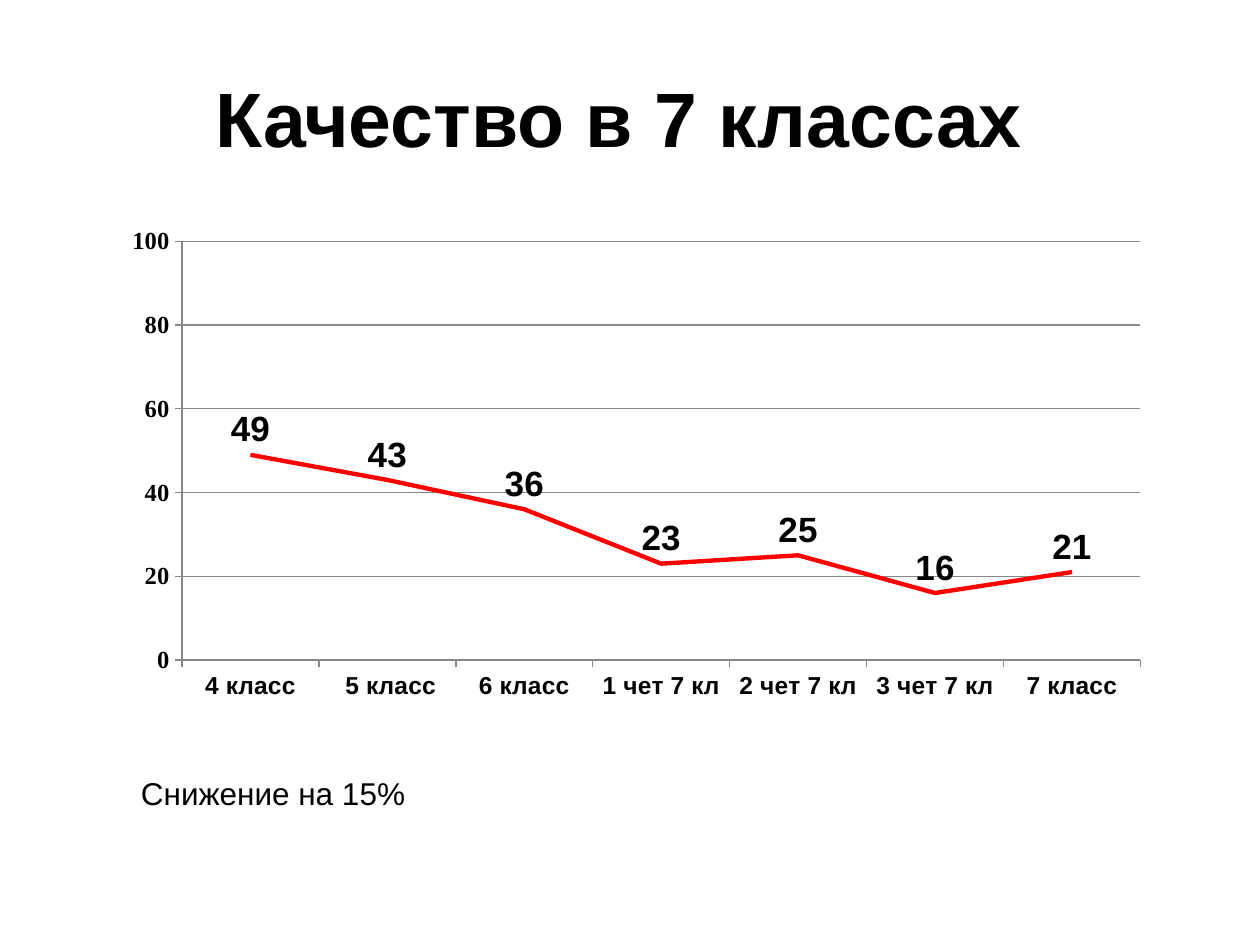
from lxml import etree
from pptx import Presentation
from pptx.chart.data import CategoryChartData
from pptx.dml.color import RGBColor
from pptx.enum.chart import XL_CHART_TYPE, XL_LABEL_POSITION, XL_MARKER_STYLE, XL_TICK_MARK
from pptx.enum.text import MSO_ANCHOR, MSO_AUTO_SIZE, PP_ALIGN
from pptx.oxml.ns import qn
from pptx.util import Inches, Pt

LINE = XL_CHART_TYPE.LINE
ABOVE = XL_LABEL_POSITION.ABOVE
PLAIN = XL_MARKER_STYLE.NONE
OUT = XL_TICK_MARK.OUTSIDE
MIDDLE = MSO_ANCHOR.MIDDLE
GROW = MSO_AUTO_SIZE.SHAPE_TO_FIT_TEXT
LEFT, CENTER = PP_ALIGN.LEFT, PP_ALIGN.CENTER

COLORS = {"text": "000000", "line": "FF0000", "grid": "878787", "back": "FFFFFF"}
SANS, SERIF = "Arial", "Times New Roman"
GRADES = ["4 класс", " 5 класс", "6 класс", "1 чет 7 кл",
          "2 чет 7 кл", "3 чет 7 кл", "7 класс"]
MARKS = [49, 43, 36, 23, 25, 16, 21]
WIDTHS = {"Series 1": 2.5, "Series 2": 0.75, "Series 3": 0.75}


def color(name):
    """Return the named colour."""
    return RGBColor.from_string(COLORS[name])


def style(font, size, bold=False, face=SANS):
    """Set the look of a font."""
    font.name, font.size, font.bold = face, Pt(size), bold
    font.color.rgb = color("text")


def stroke(line, name, width):
    """Set the colour and width of a line."""
    line.color.rgb = color(name)
    line.width = Pt(width)


def place(shape, box):
    """Move a shape to a box given in inches."""
    shape.left, shape.top, shape.width, shape.height = map(Inches, box)


def write(frame, text, size, bold, align):
    """Write one run into a text frame."""
    para = frame.paragraphs[0]
    para.alignment = align
    run = para.add_run()
    run.text = text
    style(run.font, size, bold)


def add_title(slide, box):
    """Fill the title placeholder."""
    title = slide.shapes.title
    place(title, box)
    title.text_frame.vertical_anchor = MIDDLE
    write(title.text_frame, "Качество в 7 классах ", 44, True, CENTER)


def set_plot(chart, box):
    """Fix the inner plot area as fractions of the chart."""
    area = chart.element.find(".//" + qn("c:plotArea"))
    for old in area.findall(qn("c:layout")):
        area.remove(old)
    layout = etree.Element(qn("c:layout"))
    manual = etree.SubElement(layout, qn("c:manualLayout"))
    pairs = [("layoutTarget", "inner"), ("xMode", "edge"), ("yMode", "edge")]
    for tag, value in pairs + list(zip("xywh", box)):
        etree.SubElement(manual, qn("c:" + tag)).set("val", str(value))
    area.insert(0, layout)


def add_graph(slide, box):
    """Add the line chart of marks by grade."""
    data = CategoryChartData()
    data.categories = GRADES
    for name in WIDTHS:
        data.add_series(name, MARKS)
    chart = slide.shapes.add_chart(LINE, *map(Inches, box), data).chart
    chart.has_legend = chart.has_title = False
    style(chart.font, 18)
    set_plot(chart, (0.07, 0.05, 0.91, 0.85))

    for axis, face in ((chart.category_axis, SANS), (chart.value_axis, SERIF)):
        axis.major_tick_mark = OUT
        style(axis.tick_labels.font, 14, True, face)
        stroke(axis.format.line, "grid", 0.75)
    scale = chart.value_axis
    scale.minimum_scale, scale.maximum_scale, scale.major_unit = 0, 100, 20
    scale.has_major_gridlines = True
    stroke(scale.major_gridlines.format.line, "grid", 0.75)

    for series, width in zip(chart.plots[0].series, WIDTHS.values()):
        series.smooth = False
        series.marker.style = PLAIN
        stroke(series.format.line, "line", width)
    chart.plots[0].vary_by_categories = False
    labels = chart.plots[0].series[0].data_labels
    labels.show_value = True
    labels.position = ABOVE
    style(labels.font, 20, True)


def add_note(slide, box):
    """Add the summary below the chart."""
    frame = slide.shapes.add_textbox(*map(Inches, box)).text_frame
    frame.word_wrap = False
    frame.auto_size = GROW
    write(frame, "Снижение на 15%", 18, False, LEFT)


def main():
    """Build and save the slide."""
    deck = Presentation()
    deck.slide_width, deck.slide_height = Inches(10), Inches(7.5)
    slide = deck.slides.add_slide(deck.slide_layouts[5])
    slide.background.fill.solid()
    slide.background.fill.fore_color.rgb = color("back")
    add_title(slide, (0.5, 0.3, 9, 1.25))
    add_graph(slide, (0.86, 1.72, 8.36, 3.91))
    add_note(slide, (1.02, 6.09, 2.32, 0.4))
    deck.save("out.pptx")


if __name__ == "__main__":
    main()
